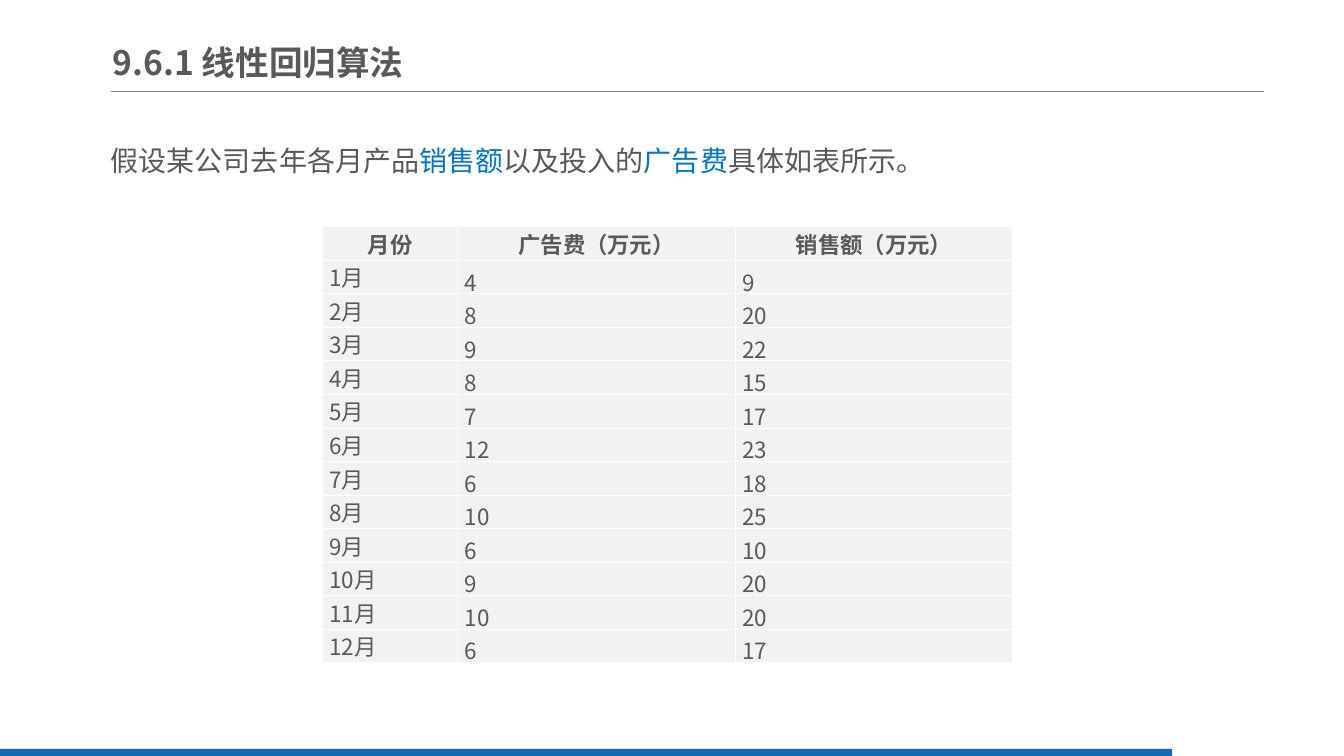
"""Build the linear regression slide with its table of monthly advertising and sales."""
from dataclasses import dataclass

from lxml import etree
from pptx import Presentation
from pptx.dml.color import RGBColor
from pptx.enum.shapes import MSO_CONNECTOR, MSO_SHAPE
from pptx.enum.text import MSO_ANCHOR, MSO_AUTO_SIZE, PP_ALIGN
from pptx.oxml.ns import qn
from pptx.slide import Slide
from pptx.table import _Cell
from pptx.text.text import _Paragraph
from pptx.util import Inches, Pt

STRAIGHT = MSO_CONNECTOR.STRAIGHT
RECTANGLE = MSO_SHAPE.RECTANGLE
TOP, MIDDLE = MSO_ANCHOR.TOP, MSO_ANCHOR.MIDDLE
LEFT, CENTER = PP_ALIGN.LEFT, PP_ALIGN.CENTER
GROW, FIXED = MSO_AUTO_SIZE.SHAPE_TO_FIT_TEXT, MSO_AUTO_SIZE.NONE

SLIDE_WIDTH, SLIDE_HEIGHT = Inches(13.33), Inches(7.5)
FONT = "Noto Sans CJK SC"
COLORS = {
    "text": "595959",
    "accent": "0075CC",
    "rule": "808080",
    "bar": "1369B2",
    "cell": "F2F2F2",
    "border": "FFFFFF",
}
HEADERS = ("月份", "广告费（万元）", "销售额（万元）")
ADVERTISING = (4, 8, 9, 8, 7, 12, 6, 10, 6, 9, 10, 6)
SALES = (9, 20, 22, 15, 17, 23, 18, 25, 10, 20, 20, 17)
COLUMN_SHARES = (10.07, 20.64, 20.64)
ROW_SHARE = 4.44


@dataclass(frozen=True)
class Box:
    """Hold a position and size in percent of the slide."""
    left: float
    top: float
    width: float
    height: float

    def lengths(self) -> tuple[int, int, int, int]:
        """Return left, top, width and height as slide lengths."""
        return across(self.left), down(self.top), across(self.width), down(self.height)


@dataclass(frozen=True)
class Piece:
    """Hold a stretch of text and its colour."""
    text: str
    color: str = "text"


@dataclass(frozen=True)
class TextBlock:
    """Describe a one-paragraph text box."""
    box: Box
    pieces: tuple[Piece, ...]
    size: int
    bold: bool = False
    anchor: MSO_ANCHOR = TOP
    spacing: float = 1.0
    side_inset: float = 0.1
    end_inset: float = 0.05
    auto_size: MSO_AUTO_SIZE = FIXED


TEXT_BLOCKS = (
    TextBlock(
        Box(7.5, 16.13, 79.73, 8.13),
        (
            Piece("假设某公司去年各月产品"),
            Piece("销售额", "accent"),
            Piece("以及投入的"),
            Piece("广告费", "accent"),
            Piece("具体如表所示。"),
        ),
        size=20, spacing=1.5, auto_size=GROW,
    ),
    TextBlock(
        Box(8.4, 4.53, 49.28, 7.33),
        (Piece("9.6.1 线性回归算法"),),
        size=24, bold=True, anchor=MIDDLE, side_inset=0, end_inset=0.07,
    ),
)
RULE = Box(8.25, 12.13, 85.8, 0)
BAR = Box(0, 99.07, 87.22, 0.93)
TABLE = Box(24, 30, sum(COLUMN_SHARES), ROW_SHARE * (len(SALES) + 1))


def across(share: float) -> int:
    """Turn a percentage of the slide width into a length."""
    return round(SLIDE_WIDTH * share / 100)


def down(share: float) -> int:
    """Turn a percentage of the slide height into a length."""
    return round(SLIDE_HEIGHT * share / 100)


def rgb(name: str) -> RGBColor:
    """Look up a named colour."""
    return RGBColor.from_string(COLORS[name])


def format_runs(paragraph: _Paragraph, size: int, bold: bool, colors: list[str]) -> None:
    """Format the runs of a paragraph, one colour for each."""
    for run, color in zip(paragraph.runs, colors):
        run.font.size = Pt(size)
        run.font.bold = bold
        run.font.color.rgb = rgb(color)
        run.font.name = FONT
        etree.SubElement(run.font._element, qn("a:ea"), typeface=FONT)


def add_text(slide: Slide, block: TextBlock) -> None:
    """Add a text box with coloured pieces."""
    frame = slide.shapes.add_textbox(*block.box.lengths()).text_frame
    frame.word_wrap = True
    frame.auto_size = block.auto_size
    frame.vertical_anchor = block.anchor
    frame.margin_left = frame.margin_right = Inches(block.side_inset)
    frame.margin_top = frame.margin_bottom = Inches(block.end_inset)
    paragraph = frame.paragraphs[0]
    paragraph.line_spacing = block.spacing
    for piece in block.pieces:
        paragraph.add_run().text = piece.text
    format_runs(paragraph, block.size, block.bold, [piece.color for piece in block.pieces])


def add_rule(slide: Slide, box: Box) -> None:
    """Add the thin line under the title."""
    left, top, width, height = box.lengths()
    rule = slide.shapes.add_connector(STRAIGHT, left, top, left + width, top + height)
    rule.line.color.rgb = rgb("rule")
    rule.line.width = Pt(0.75)
    etree.SubElement(rule._element.spPr, qn("a:effectLst"))


def add_bar(slide: Slide, box: Box) -> None:
    """Add the bar along the bottom edge."""
    bar = slide.shapes.add_shape(RECTANGLE, *box.lengths())
    bar.shadow.inherit = False
    bar.fill.solid()
    bar.fill.fore_color.rgb = rgb("bar")
    bar.line.fill.background()


def add_borders(cell: _Cell) -> None:
    """Draw a thin border on each side of a cell."""
    properties = cell._tc.get_or_add_tcPr()
    for side in ("a:lnL", "a:lnR", "a:lnT", "a:lnB"):
        line = etree.SubElement(properties, qn(side), w=str(Pt(0.75)))
        fill = etree.SubElement(line, qn("a:solidFill"))
        etree.SubElement(fill, qn("a:srgbClr"), val=COLORS["border"])


def fill_cell(cell: _Cell, text: str, is_header: bool, is_value: bool) -> None:
    """Write and format one table cell."""
    add_borders(cell)
    cell.fill.solid()
    cell.fill.fore_color.rgb = rgb("cell")
    cell.margin_left = cell.margin_right = Inches(0.07)
    cell.margin_top = cell.margin_bottom = 0
    cell.vertical_anchor = TOP if is_value else MIDDLE
    paragraph = cell.text_frame.paragraphs[0]
    paragraph.text = text
    paragraph.alignment = CENTER if is_header else LEFT
    paragraph.line_spacing = 1.15 if is_value else 1.0
    format_runs(paragraph, 16, is_header, ["text"])


def add_sales_table(slide: Slide, box: Box) -> None:
    """Add the table of monthly advertising and sales."""
    months = [f"{month}月" for month in range(1, len(SALES) + 1)]
    rows = [HEADERS, *zip(months, ADVERTISING, SALES)]
    table = slide.shapes.add_table(len(rows), len(HEADERS), *box.lengths()).table
    table.first_row = table.horz_banding = False
    for column, share in zip(table.columns, COLUMN_SHARES):
        column.width = across(share)
    for row_index, values in enumerate(rows):
        table.rows[row_index].height = down(ROW_SHARE)
        for column_index, value in enumerate(values):
            is_header = row_index == 0
            is_value = not is_header and column_index > 0
            fill_cell(table.cell(row_index, column_index), str(value), is_header, is_value)


def main() -> None:
    """Build and save the presentation."""
    presentation = Presentation()
    presentation.slide_width, presentation.slide_height = SLIDE_WIDTH, SLIDE_HEIGHT
    slide = presentation.slides.add_slide(presentation.slide_layouts[6])
    add_rule(slide, RULE)
    add_bar(slide, BAR)
    for block in TEXT_BLOCKS:
        add_text(slide, block)
    add_sales_table(slide, TABLE)
    presentation.save("out.pptx")


if __name__ == "__main__":
    main()
